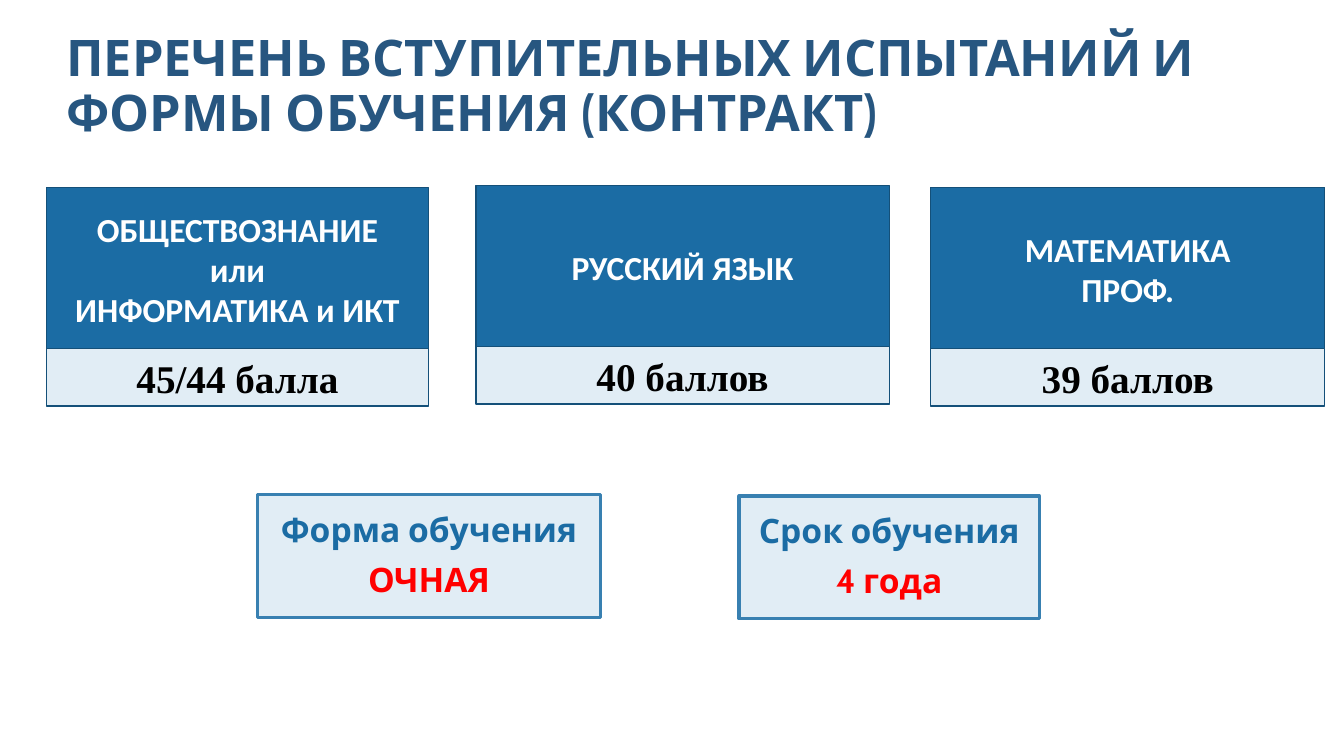
from pptx import Presentation
from pptx.dml.color import RGBColor
from pptx.enum.shapes import MSO_SHAPE
from pptx.enum.text import MSO_ANCHOR, PP_ALIGN
from pptx.util import Inches, Pt

COLORS = {
    "title": "275680", "blue": "1B6CA4", "pale": "E1EDF5", "border": "145079",
    "frame": "3880B1", "white": "FFFFFF", "black": "000000", "red": "FF0000",
}
STYLES = {
    "title": {"name": "Cabin", "size": Pt(36), "bold": True},
    "study": {"name": "Cabin", "size": Pt(24), "bold": True},
    "subject": {"name": "Calibri", "size": Pt(24), "bold": True},
    "score": {"name": "Times New Roman", "size": Pt(28), "bold": True},
}


def write_lines(shape, lines, style, colors, paragraph_format):
    """Fill a shape with one paragraph per line, each in its own color."""
    frame = shape.text_frame
    frame.word_wrap = True
    for index, (line, color) in enumerate(zip(lines, colors)):
        paragraph = frame.add_paragraph() if index else frame.paragraphs[0]
        for attribute, value in paragraph_format.items():
            if index or attribute != "space_before":
                setattr(paragraph, attribute, value)
        run = paragraph.add_run()
        run.text = line
        for attribute, value in STYLES[style].items():
            setattr(run.font, attribute, value)
        run.font.color.rgb = RGBColor.from_string(COLORS[color])


def add_box(left, top, width, height, fill, line, line_width):
    box = slide.shapes.add_shape(
        MSO_SHAPE.RECTANGLE, Inches(left), Inches(top), Inches(width), Inches(height))
    box.shadow.inherit = False
    box.fill.solid()
    box.fill.fore_color.rgb = RGBColor.from_string(COLORS[fill])
    box.line.color.rgb = RGBColor.from_string(COLORS[line])
    box.line.width = Pt(line_width)
    box.text_frame.vertical_anchor = MSO_ANCHOR.MIDDLE
    return box


presentation = Presentation()
presentation.slide_width = Inches(13.33)
presentation.slide_height = Inches(7.5)
slide = presentation.slides.add_slide(presentation.slide_layouts[6])

title = slide.shapes.add_textbox(Inches(0.56), Inches(0.28), Inches(12.2), Inches(1.2))
write_lines(title, ["ПЕРЕЧЕНЬ ВСТУПИТЕЛЬНЫХ ИСПЫТАНИЙ И ФОРМЫ ОБУЧЕНИЯ (КОНТРАКТ)"],
            "title", ["title"], {"line_spacing": 0.9})

study_format = {"alignment": PP_ALIGN.CENTER, "line_spacing": 0.9, "space_before": Pt(10)}
study_boxes = [
    (2.55, 4.91, 3.41, ["Форма обучения", "ОЧНАЯ"]),
    (7.33, 4.92, 2.98, ["Срок обучения", "4 года"]),
]
for left, top, width, lines in study_boxes:
    box = add_box(left, top, width, 1.22, "pale", "frame", 2.25)
    write_lines(box, lines, "study", ["blue", "red"], study_format)

exam_format = {"alignment": PP_ALIGN.CENTER}
exams = [
    (0.46, 1.86, 3.79, ["ОБЩЕСТВОЗНАНИЕ", "или", "ИНФОРМАТИКА и ИКТ"], "45/44 балла"),
    (4.72, 1.84, 4.1, ["РУССКИЙ ЯЗЫК"], "40 баллов"),
    (9.23, 1.86, 3.91, ["МАТЕМАТИКА", "ПРОФ."], "39 баллов"),
]
for left, top, width, subject, score in exams:
    subject_box = add_box(left, top, width, 1.62, "blue", "border", 1)
    write_lines(subject_box, subject, "subject", ["white"] * len(subject), exam_format)
    score_box = add_box(left, top + 1.6, width, 0.57, "pale", "border", 1)
    write_lines(score_box, [score], "score", ["black"], exam_format)

presentation.save("out.pptx")
